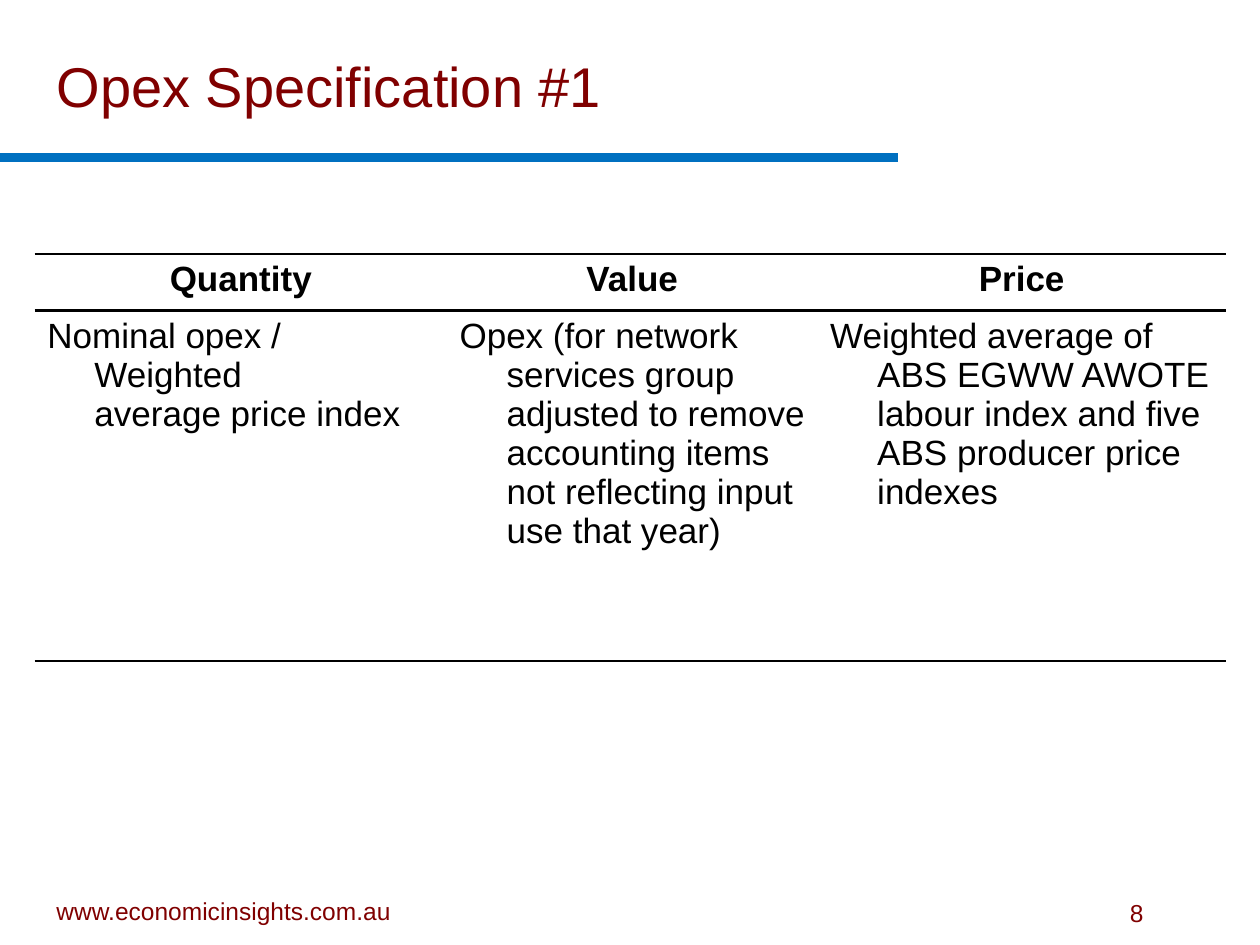
from dataclasses import dataclass

import pptx
import pptx.dml.color
import pptx.enum.shapes
import pptx.enum.text
import pptx.oxml
import pptx.oxml.ns
import pptx.util
from pptx.util import Cm

COLORS = {"maroon": "800000", "blue": "0070C0", "black": "000000"}
FONT = "Arial"
ALIGN = pptx.enum.text.PP_ALIGN
ANCHOR = pptx.enum.text.MSO_ANCHOR


@dataclass
class Label:
    text: str
    left: float
    top: float
    width: float
    height: float
    size: int
    align: ALIGN = ALIGN.LEFT
    anchor: ANCHOR = ANCHOR.BOTTOM
    wrap: bool = True


@dataclass
class Column:
    heading: str
    detail: str
    width: float


LABELS = [
    Label("www.economicinsights.com.au", 0.51, 17.93, 8, 0.86, 14, ALIGN.CENTER),
    Label("8", 22.53, 17.98, 1.12, 0.84, 14, anchor=ANCHOR.TOP, wrap=False),
    Label("Opex Specification #1", 0.89, 0.91, 17.2, 1.6, 32),
]
COLUMNS = [
    Column("Quantity", "Nominal opex / Weighted \vaverage price index", 8.31),
    Column(
        "Value",
        "Opex (for network services group adjusted to remove accounting "
        "items not reflecting input use that year)",
        7.47,
    ),
    Column(
        "Price",
        "Weighted average of ABS EGWW AWOTE labour index and five ABS "
        "producer price indexes",
        8.23,
    ),
]
ROW_HEIGHTS = [1.14, 7.06]
HANGING = Cm(0.95)


def rgb(name: str) -> pptx.dml.color.RGBColor:
    return pptx.dml.color.RGBColor.from_string(COLORS[name])


def format_runs(paragraph, size: int, color: str, bold: bool = False) -> None:
    for run in paragraph.runs:
        run.font.name = FONT
        run.font.size = pptx.util.Pt(size)
        run.font.bold = bold
        run.font.color.rgb = rgb(color)


def draw_label(slide, label: Label) -> None:
    box = slide.shapes.add_textbox(
        Cm(label.left), Cm(label.top), Cm(label.width), Cm(label.height)
    )
    frame = box.text_frame
    frame.word_wrap = label.wrap
    frame.vertical_anchor = label.anchor
    frame.text = label.text
    paragraph = frame.paragraphs[0]
    paragraph.alignment = label.align
    format_runs(paragraph, label.size, "maroon")


def draw_title_rule(slide) -> None:
    rule = slide.shapes.add_connector(
        pptx.enum.shapes.MSO_CONNECTOR.STRAIGHT, 0, Cm(3.17), Cm(18.11), Cm(3.17)
    )
    rule.line.color.rgb = rgb("blue")
    rule.line.width = pptx.util.Pt(5)
    rule._element.spPr.append(pptx.oxml.parse_xml(
        f'<a:effectLst {pptx.oxml.ns.nsdecls("a")}/>'
    ))


def set_borders(cell) -> None:
    properties = cell._tc.get_or_add_tcPr()
    solid = f'<a:solidFill><a:srgbClr val="{COLORS["black"]}"/></a:solidFill>'
    edges = {"lnL": "<a:noFill/>", "lnR": "<a:noFill/>", "lnT": solid, "lnB": solid}
    for edge, paint in edges.items():
        properties.append(pptx.oxml.parse_xml(
            f'<a:{edge} {pptx.oxml.ns.nsdecls("a")} w="{pptx.util.Pt(1.5)}">'
            f"{paint}</a:{edge}>"
        ))


def fill_cell(cell, text: str, heading: bool) -> None:
    set_borders(cell)
    cell.fill.background()
    cell.text_frame.text = text
    paragraph = cell.text_frame.paragraphs[0]
    paragraph.alignment = ALIGN.CENTER if heading else ALIGN.LEFT
    indents = paragraph._p.get_or_add_pPr()
    indents.set("marL", str(HANGING))
    indents.set("indent", str(-HANGING))
    if not heading:
        paragraph.space_after = pptx.util.Pt(4)
    format_runs(paragraph, 20, "black", heading)


def draw_specification(slide) -> None:
    width = sum(column.width for column in COLUMNS)
    table = slide.shapes.add_table(
        len(ROW_HEIGHTS), len(COLUMNS),
        Cm(0.7), Cm(5.12), Cm(width), Cm(sum(ROW_HEIGHTS)),
    ).table
    table.first_row = False
    table.horz_banding = False
    for row, height in zip(table.rows, ROW_HEIGHTS):
        row.height = Cm(height)
    for index, column in enumerate(COLUMNS):
        table.columns[index].width = Cm(column.width)
        fill_cell(table.cell(0, index), column.heading, True)
        fill_cell(table.cell(1, index), column.detail, False)


def main() -> None:
    presentation = pptx.Presentation()
    presentation.slide_width = Cm(25.4)
    presentation.slide_height = Cm(19.05)
    slide = presentation.slides.add_slide(presentation.slide_layouts[6])
    draw_title_rule(slide)
    for label in LABELS:
        draw_label(slide, label)
    draw_specification(slide)
    presentation.save("out.pptx")


if __name__ == "__main__":
    main()
